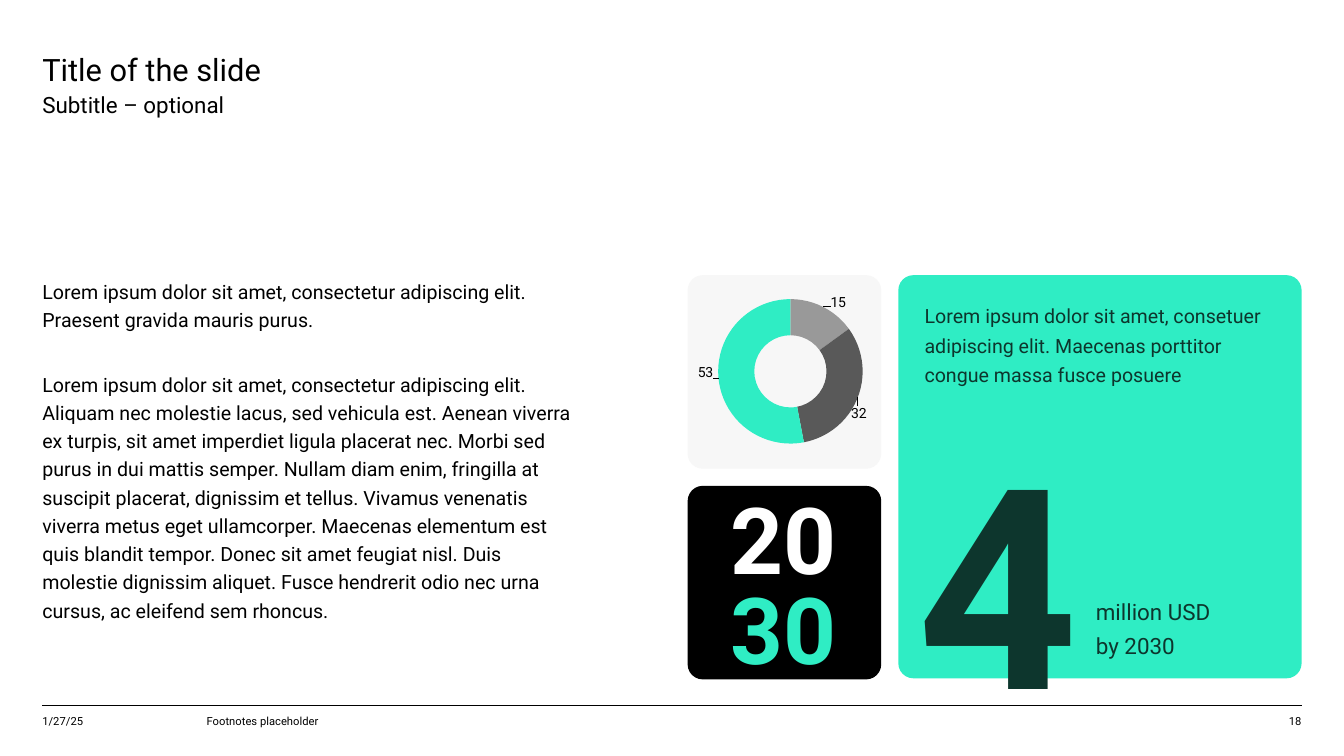
from dataclasses import dataclass

from lxml import etree
from pptx import Presentation
from pptx import util as u
from pptx.chart import data as chart_data
from pptx.dml import color
from pptx.enum import chart as charts, shapes, text
from pptx.oxml import ns


@dataclass(frozen=True)
class Theme:
    """Colours, typeface and type sizes of the slide."""
    font: str = "Roboto"
    ink: str = "000000"
    paper: str = "FFFFFF"
    mint: str = "2FEDC4"
    forest: str = "0D362D"
    mist: str = "F7F7F7"
    grey: str = "999999"
    slate: str = "595959"
    title: int = 22
    subtitle: int = 16
    body: int = 14
    label: int = 10
    footnote: int = 8
    year: int = 66
    figure: int = 200


@dataclass(frozen=True)
class Box:
    """A rectangle in inches."""
    left: float
    top: float
    width: float
    height: float

    def inner(self, left, top, width, height):
        """Return a box placed relative to this one."""
        return Box(self.left + left, self.top + top, width, height)

    def emu(self):
        """Return left, top, width and height as lengths."""
        return [u.Inches(side) for side in (self.left, self.top, self.width, self.height)]


THEME = Theme()
CORNER = 0.15
GAP = 0.17
STORY = [
    "Lorem ipsum dolor sit amet, consectetur adipiscing elit. Praesent gravida mauris purus.",
    "Lorem ipsum dolor sit amet, consectetur adipiscing elit. Aliquam nec molestie lacus, sed "
    "vehicula est. Aenean viverra ex turpis, sit amet imperdiet ligula placerat nec. Morbi sed "
    "purus in dui mattis semper. Nullam diam enim, fringilla at suscipit placerat, dignissim et "
    "tellus. Vivamus venenatis viverra metus eget ullamcorper. Maecenas elementum est quis "
    "blandit tempor. Donec sit amet feugiat nisl. Duis molestie dignissim aliquet. Fusce "
    "hendrerit odio nec urna cursus, ac eleifend sem rhoncus.",
]
CLAIM = ("Lorem ipsum dolor sit amet, consetuer adipiscing elit. "
         "Maecenas porttitor congue massa fusce posuere")
SLICES = [
    (15, THEME.grey, (0.09, -0.12)),
    (32, THEME.slate, (0.07, 0.13)),
    (53, THEME.mint, (-0.12, -0.02)),
]


def apply(target, **values):
    """Set each named format value on the target."""
    for name, value in values.items():
        setattr(target, name, value)


def style_font(font, size, tint, bold=False):
    """Give a font the theme typeface, a size and a colour."""
    apply(font, name=THEME.font, size=u.Pt(size), bold=bold)
    font.color.rgb = color.RGBColor.from_string(tint)


def write(shape, lines, size, tints=(THEME.ink,), bold=False, align=text.PP_ALIGN.LEFT,
          spacing=1.0, gap=0, anchor=text.MSO_ANCHOR.TOP):
    """Fill a shape with one paragraph per line, cycling through the tints."""
    frame = shape.text_frame
    apply(frame, word_wrap=True, auto_size=text.MSO_AUTO_SIZE.NONE, vertical_anchor=anchor,
          margin_left=0, margin_top=0, margin_right=0, margin_bottom=0)
    for index, line in enumerate(lines):
        para = frame.add_paragraph() if index else frame.paragraphs[0]
        apply(para, alignment=align, line_spacing=spacing, space_before=u.Pt(gap if index else 0))
        span = para.add_run()
        span.text = line
        style_font(span.font, size, tints[index % len(tints)], bold)


def add_text(parent, box, lines, size, **style):
    """Add a text box."""
    write(parent.shapes.add_textbox(*box.emu()), lines, size, **style)


def fill_placeholder(holder, box, lines, size, **style):
    """Move a placeholder, write in it and drop its bullets."""
    apply(holder, **dict(zip(("left", "top", "width", "height"), box.emu())))
    write(holder, lines, size, **style)
    for para in holder.text_frame.paragraphs:
        properties = para._p.get_or_add_pPr()
        properties.set("marL", "0")
        properties.set("indent", "0")
        etree.SubElement(properties, ns.qn("a:buNone"))


def add_card(parent, box, tint):
    """Add a plain rounded card."""
    card = parent.shapes.add_shape(shapes.MSO_SHAPE.ROUNDED_RECTANGLE, *box.emu())
    card.adjustments[0] = CORNER / min(box.width, box.height)
    card.shadow.inherit = False
    card.fill.solid()
    card.fill.fore_color.rgb = color.RGBColor.from_string(tint)
    card.line.fill.background()


def manual_layout(**values):
    """Return a chart layout element holding the given values."""
    layout = etree.Element(ns.qn("c:layout"))
    manual = etree.SubElement(layout, ns.qn("c:manualLayout"))
    for name, value in values.items():
        etree.SubElement(manual, ns.qn(f"c:{name}")).set("val", str(value))
    return layout


def add_share_card(page, box):
    """Draw the card with the doughnut chart."""
    add_card(page, box, THEME.mist)
    values = chart_data.CategoryChartData()
    values.categories = ["1", "2", "3"]
    values.add_series("Series 1", [value for value, tint, shift in SLICES])
    area = box.inner(-0.26, 0.1, 2.56, 1.71)
    chart = page.shapes.add_chart(charts.XL_CHART_TYPE.DOUGHNUT, *area.emu(), values).chart
    apply(chart, has_legend=False, has_title=False)
    style_font(chart.font, THEME.label, THEME.ink)
    plot = chart.plots[0]
    plot.vary_by_categories = False
    series = plot.series[0]
    apply(series.data_labels, show_value=True, show_percentage=False)
    style_font(series.data_labels.font, THEME.label, THEME.ink)
    for index, (value, tint, (across, down)) in enumerate(SLICES):
        point = series.points[index]
        point.format.fill.solid()
        point.format.fill.fore_color.rgb = color.RGBColor.from_string(tint)
        point.format.line.fill.background()
        style_font(point.data_label.font, THEME.label, THEME.ink)
    for label, (value, tint, (across, down)) in zip(
            series._element.iter(ns.qn("c:dLbl")), SLICES):
        label.insert(1, manual_layout(x=across, y=down))
    plot._element.find(ns.qn("c:holeSize")).set("val", "75")
    plot_area = plot._element.getparent()
    for layout in plot_area.findall(ns.qn("c:layout")):
        plot_area.remove(layout)
    plot_area.insert(0, manual_layout(layoutTarget="inner", xMode="edge", yMode="edge",
                                      x=0.22, y=0.08, w=0.56, h=0.84))


def add_year_card(page, box):
    """Draw the card with the target year."""
    group = page.shapes.add_group_shape()
    add_card(group, box, THEME.ink)
    add_text(group, box.inner(0.25, -0.05, 1.4, 2.23), ["20", "30"], THEME.year,
             tints=(THEME.paper, THEME.mint), bold=True, align=text.PP_ALIGN.CENTER,
             spacing=u.Pt(64), anchor=text.MSO_ANCHOR.MIDDLE)


def add_fact_card(page, box):
    """Draw the card with the claim and its large figure."""
    group = page.shapes.add_group_shape()
    add_card(group, box, THEME.mint)
    tints = (THEME.forest,)
    add_text(group, box.inner(1.96, 3.18, 1.67, 0.73), ["million USD", "by 2030"],
             THEME.subtitle, tints=tints, spacing=u.Pt(21), gap=3)
    add_text(group, box.inner(0.26, 0.23, 3.54, 0.73), [CLAIM], THEME.body,
             tints=tints, spacing=u.Pt(21))
    add_text(group, box.inner(0.19, 1, 1.67, 2.97), ["4"], THEME.figure,
             tints=tints, bold=True, spacing=1.1)


def add_header(page, box):
    """Place the title and the subtitle."""
    fill_placeholder(page.shapes.title, box.inner(0, 0, box.width, 0.37),
                     ["Title of the slide"], THEME.title)
    fill_placeholder(page.placeholders[1], box.inner(0, 0.4, box.width, 0.3),
                     ["Subtitle – optional"], THEME.subtitle)


def add_story(page, box):
    """Place the running text."""
    fill_placeholder(page.placeholders[2], box, STORY, THEME.body, spacing=1.2, gap=26)


def add_footer(page, box):
    """Draw the rule with date, footnote and page number below it."""
    left, top, width, height = box.emu()
    rule = page.shapes.add_connector(shapes.MSO_CONNECTOR.STRAIGHT, left, top, left + width, top)
    rule.line.width = u.Pt(0.75)
    rule.line.color.rgb = color.RGBColor.from_string(THEME.ink)
    etree.SubElement(rule._element.spPr, ns.qn("a:effectLst"))
    for offset, span, words, align in (
            (0, 1.1, "1/27/25", text.PP_ALIGN.LEFT),
            (1.63, 3.5, "Footnotes placeholder", text.PP_ALIGN.LEFT),
            (box.width - 0.6, 0.6, "18", text.PP_ALIGN.RIGHT)):
        add_text(page, box.inner(offset, 0.09, span, 0.2), [words], THEME.footnote, align=align)


def main():
    """Build the slide and save it."""
    deck = Presentation()
    apply(deck, slide_width=u.Inches(13.33), slide_height=u.Inches(7.5))
    page = deck.slides.add_slide(deck.slide_layouts[3])
    add_footer(page, Box(0.42, 7, 12.49, 0.29))
    add_header(page, Box(0.42, 0.5, 5.1, 0.7))
    add_story(page, Box(0.42, 2.73, 5.27, 3.97))
    tile = Box(6.82, 2.73, 1.92, 1.92)
    add_share_card(page, tile)
    add_year_card(page, tile.inner(0, tile.height + GAP, tile.width, tile.height))
    add_fact_card(page, tile.inner(tile.width + GAP, 0, 4, 4))
    deck.save("out.pptx")


if __name__ == "__main__":
    main()
